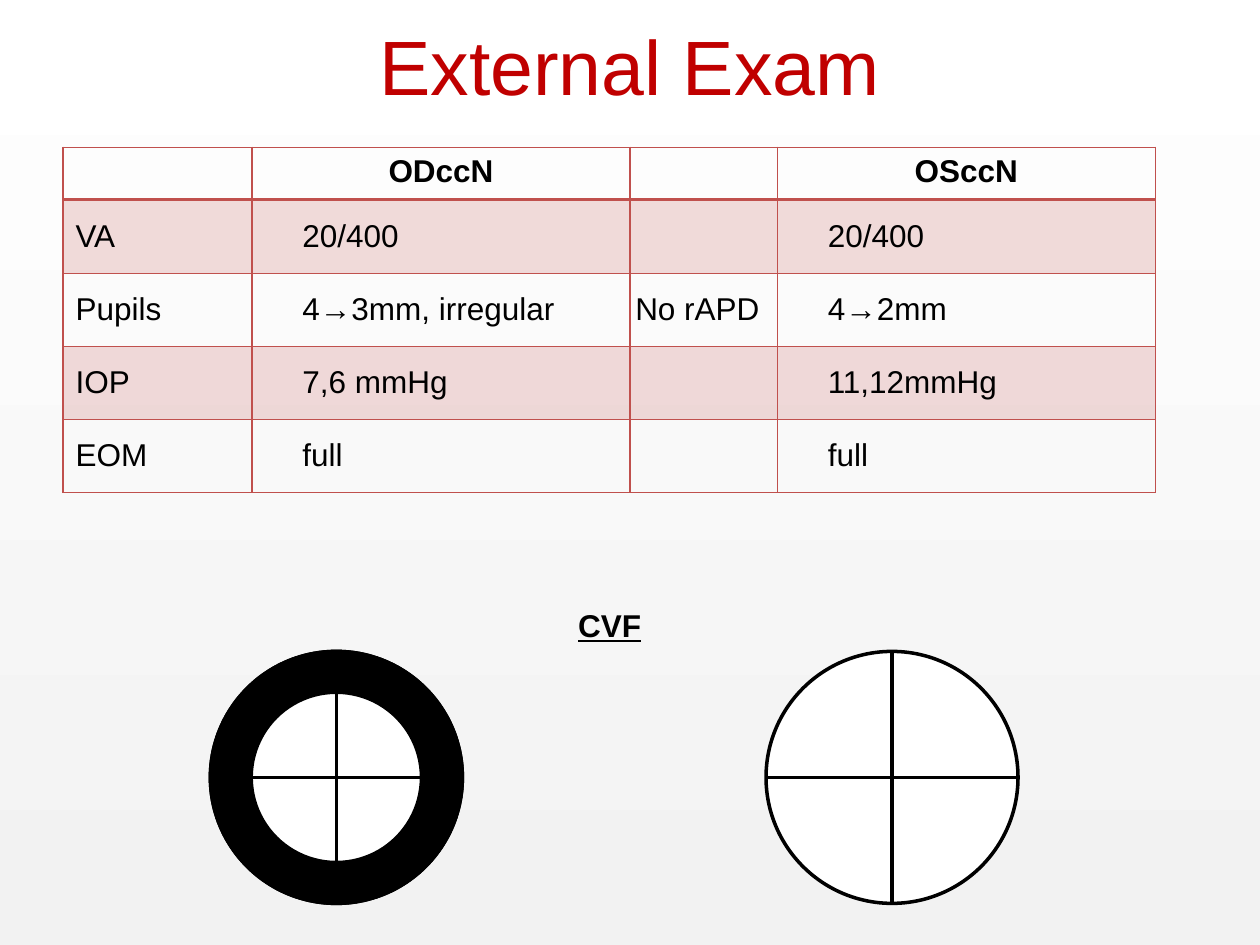
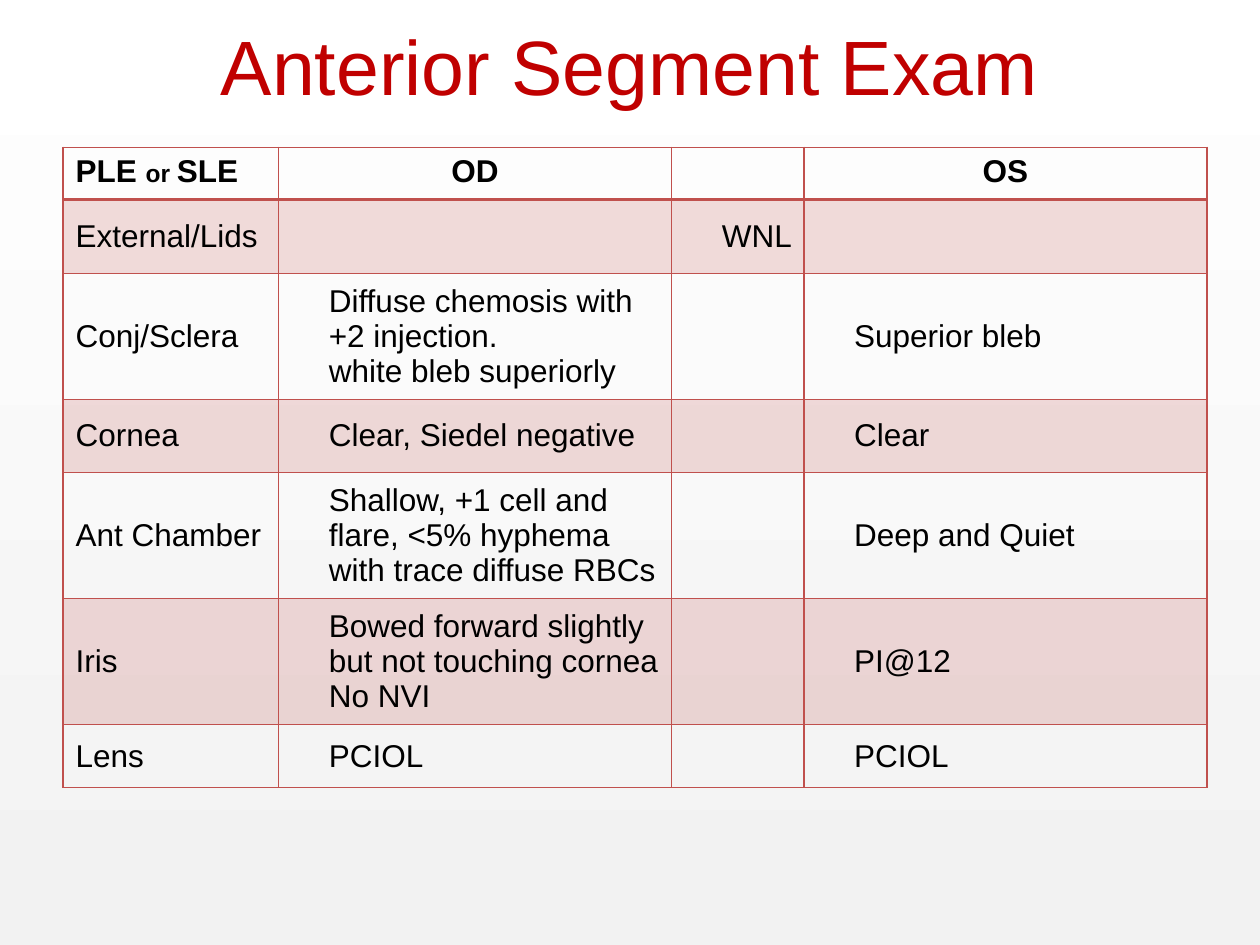
"""Builds two eye exam slides: external exam and anterior segment exam."""
from itertools import cycle

from lxml import etree
from pptx import Presentation
from pptx.dml.color import RGBColor
from pptx.enum import shapes, text
from pptx.oxml import ns
from pptx.util import Inches, Pt

TITLE_RED = RGBColor(0xC0, 0x00, 0x00)
GRID_RED = RGBColor(0xC0, 0x50, 0x4D)
BLACK = RGBColor(0x00, 0x00, 0x00)
WHITE = RGBColor(0xFF, 0xFF, 0xFF)
PALE_GREY = RGBColor(0xF2, 0xF2, 0xF2)
FONT = "Arial"
LEFT, CENTER = text.PP_ALIGN.LEFT, text.PP_ALIGN.CENTER


def write(frame, content, sizes=(18,), color=BLACK, bold=False, underline=False, align=LEFT):
    """Write lines split at newlines, each with runs split at bars."""
    for index, line in enumerate(content.split("\n")):
        paragraph = frame.paragraphs[0] if index == 0 else frame.add_paragraph()
        paragraph.alignment = align
        for words, size in zip(line.split("|"), cycle(sizes)):
            run = paragraph.add_run()
            run.text = words
            run.font.name = FONT
            run.font.size = Pt(size)
            run.font.color.rgb = color
            run.font.bold = bold
            run.font.underline = underline


def style_cell(cell, is_header, is_banded):
    """Draw the red grid around a cell and tint the banded rows."""
    properties = cell._tc.get_or_add_tcPr()
    for side in ("lnL", "lnR", "lnT", "lnB"):
        width = Pt(2 if is_header and side == "lnB" else 1)
        border = etree.SubElement(properties, ns.qn(f"a:{side}"), w=str(width))
        solid = etree.SubElement(border, ns.qn("a:solidFill"))
        etree.SubElement(solid, ns.qn("a:srgbClr"), val=str(GRID_RED))
    if is_banded:
        cell.fill.solid()
        cell.fill.fore_color.rgb = GRID_RED
        tint = properties.find(f"{ns.qn('a:solidFill')}/{ns.qn('a:srgbClr')}")
        etree.SubElement(tint, ns.qn("a:alpha"), val="20000")
    else:
        cell.fill.background()


EXAMS = [
    {
        "title": "External Exam",
        "columns": (1.5, 3, 1.17, 3),
        "heights": (0.41, 0.59, 0.58, 0.58, 0.58),
        "middle": {"margin_left": 0, "margin_right": 0.1, "align": CENTER},
        "rows": [
            ("", "ODccN", "", "OSccN"),
            ("VA", "20/400", "", "20/400"),
            ("Pupils", "4→3mm, irregular", "No rAPD", "4→2mm"),
            ("IOP", "7,6 mmHg", "", "11,12mmHg"),
            ("EOM", "full", "", "full"),
        ],
    },
    {
        "title": "Anterior Segment Exam",
        "columns": (1.71, 3.12, 1.05, 3.2),
        "heights": (0.41, 0.59, 0.94, 0.58, 0.94, 0.94, 0.5),
        "middle": {"margin_left": 0.4, "margin_right": 0, "align": LEFT},
        "rows": [
            ("PLE |or |SLE", "OD", "", "OS"),
            ("External/Lids", "", "WNL", ""),
            ("Conj/Sclera", "Diffuse chemosis with +2 injection.\nwhite bleb superiorly",
             "", "Superior bleb"),
            ("Cornea", "Clear, Siedel negative", "", "Clear"),
            ("Ant Chamber", "Shallow, +1 cell and flare, <5% hyphema with trace diffuse RBCs",
             "", "Deep and Quiet"),
            ("Iris", "Bowed forward slightly but not touching cornea\nNo NVI", "", "PI@12"),
            ("Lens", "PCIOL", "", "PCIOL"),
        ],
    },
]

prs = Presentation()
prs.slide_width, prs.slide_height = Inches(10), Inches(7.5)

backdrop = prs.slide_master.background.fill
backdrop.gradient()
backdrop.gradient_angle = 90
for stop, shade in zip(backdrop.gradient_stops, (PALE_GREY, WHITE)):
    stop.color.rgb = shade

for exam in EXAMS:
    slide = prs.slides.add_slide(prs.slide_layouts[6])
    title = slide.shapes.add_textbox(Inches(0.5), Inches(-0.11), Inches(9), Inches(1.25)).text_frame
    title.word_wrap = True
    title.vertical_anchor = text.MSO_ANCHOR.MIDDLE
    write(title, exam["title"], sizes=(44,), color=TITLE_RED, align=CENTER)

    findings = slide.shapes.add_table(
        len(exam["rows"]), len(exam["columns"]), Inches(0.5), Inches(1.17),
        Inches(sum(exam["columns"])), Inches(sum(exam["heights"]))).table
    findings.first_row = True
    findings.horz_banding = False
    for column, width in zip(findings.columns, exam["columns"]):
        column.width = Inches(width)
    for row, height in zip(findings.rows, exam["heights"]):
        row.height = Inches(height)

    for row_index, entries in enumerate(exam["rows"]):
        is_header = row_index == 0
        for column_index, entry in enumerate(entries):
            cell = findings.cell(row_index, column_index)
            style_cell(cell, is_header, row_index % 2 == 1)
            align = CENTER if is_header and column_index else LEFT
            if not is_header:
                cell.vertical_anchor = text.MSO_ANCHOR.MIDDLE
                if column_index in (1, 3):
                    cell.margin_left = Inches(0.4)
                elif column_index == 2:
                    cell.margin_left = Inches(exam["middle"]["margin_left"])
                    cell.margin_right = Inches(exam["middle"]["margin_right"])
                    align = exam["middle"]["align"]
            if entry:
                write(cell.text_frame, entry, sizes=(18, 14), bold=is_header, align=align)

external = prs.slides[0]
FIELD, LOSS = shapes.MSO_SHAPE.FLOWCHART_OR, shapes.MSO_SHAPE.DONUT
for outline, left, color in ((FIELD, 1.67, WHITE), (FIELD, 6.08, WHITE), (LOSS, 1.67, BLACK)):
    visual_field = external.shapes.add_shape(
        outline, Inches(left), Inches(5.17), Inches(2), Inches(2))
    visual_field.shadow.inherit = False
    visual_field.fill.solid()
    visual_field.fill.fore_color.rgb = color
    visual_field.line.color.rgb = BLACK
    visual_field.line.width = Pt(2)
    if outline == LOSS:
        visual_field.adjustments[0] = 0.162

field_label = external.shapes.add_textbox(
    Inches(4.49), Inches(4.76), Inches(0.71), Inches(0.4)).text_frame
field_label.word_wrap = False
field_label.auto_size = text.MSO_AUTO_SIZE.SHAPE_TO_FIT_TEXT
write(field_label, "CVF", bold=True, underline=True)

prs.save("out.pptx")
